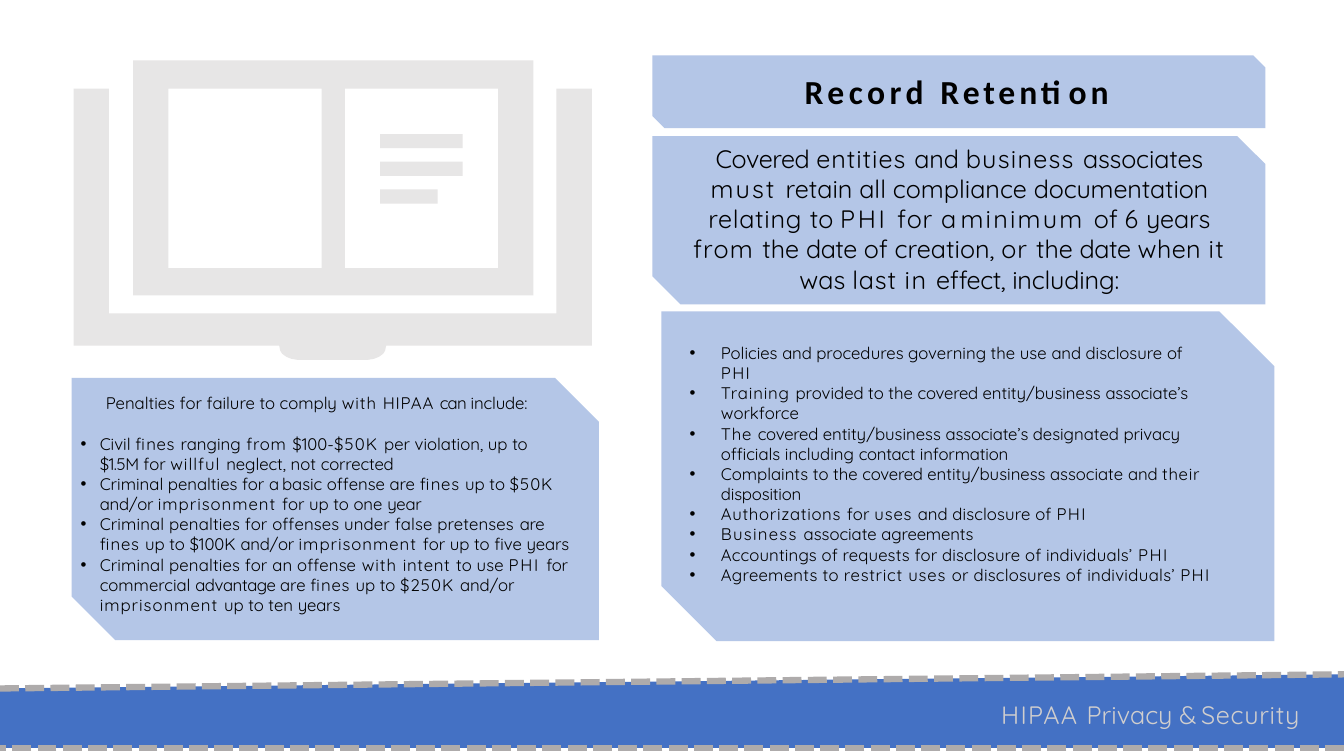
from lxml import etree
from pptx import Presentation
from pptx import util as u
from pptx.dml.color import RGBColor
from pptx.enum import dml, shapes, text
from pptx.oxml import ns

PANEL, ICON, BAND, DASH = "B4C6E7", "E7E6E6", "4471C4", "AEABAB"
INK, PALE = "000000", "D0CECE"

# A number in square brackets sets the letter spacing, in points, of what follows.
# A line that starts with a bullet opens a list item; other lines continue it.
INTRO = [
    "[-0.3]Covered [0.7]entities [-0.1]and [0.9]business [-0.1]associates [1.5]must "
    "[0]retain all compliance [-0.1]documentation [0.5]relating [0]to [1.9]PHI [0.6]for "
    "[-1.8]a [1.6]minimum [0]of [0.9]6[-0.1] years [0.9]from [0]the [-0.3]date "
    "[0]of creation, [0.7]or [0]the [-0.3]date [0.3]when [1.1]it [0]was [0.6]last "
    "[1.1]in [-0.3]effect, [-0.1]including:",
]
RECORDS = [
    "•Policies [-0.1]and [0]procedures governing the use [-0.1]and [0]disclosure [-0.2]of",
    "[1]PHI",
    "•[0.6]Training [0]provided to the [-0.2]covered [0]entity/business [-0.1]associate’s",
    "workforce",
    "•[0.6]The [-0.2]covered [0]entity/business [-0.1]associate’s [0]designated [-0.1]privacy",
    "officials including [-0.2]contact [-0.1]information",
    "•Complaints to the [-0.2]covered [0]entity/business associate [-0.1]and [0.5]their "
    "[-0.1]disposition",
    "•[0.5]Authorizations [0.1]for [0.6]uses [0]and [0.1]disclosure of [1]PHI",
    "•[0.9]Business [0]associate [-0.1]agreements",
    "•[0.1]Accountings of requests for disclosure of individuals’ [1]PHI",
    "•[0.2]Agreements to [0.5]restrict [0.6]uses [0.2]or disclosures of individuals’ [0.9]PHI",
]
PENALTIES = [
    "•Civil [0.5]fines [0]ranging[0.6] from [0]$100-[0.8]$50K [0]per violation, up [-0.2]to",
    "[-0.3]$1.5M [0]for [0.7]willful [0]neglect, not [-0.1]corrected",
    "•Criminal penalties for [-1.3]a [0]basic offense are [0.5]fines [0]up to [0.7]$50K "
    "[-0.2]and/or [0.7]imprisonment [0]for up to one [-0.2]year",
    "•[0.1]Criminal penalties for offenses under false pretenses [-0.2]are",
    "[0.5]fines [0]up to $100K [-0.2]and/or [0.7]imprisonment [0]for up to five [-0.1]years",
    "•[0.1]Criminal penalties for an offense [0.7]with [0.5]intent [0.1]to use [1.2]PHI "
    "[-0.2]for [0]commercial [-0.3]advantage [0]are [0.5]fines [0]up to [0.7]$250K "
    "[-0.1]and/or [0.7]imprisonment [0]up to ten [-0.1]years",
]


def color(value):
    return RGBColor.from_string(value)


def paint(shape, fill):
    shape.shadow.inherit = False
    shape.fill.solid()
    shape.fill.fore_color.rgb = color(fill)
    shape.line.fill.background()


def panel(page, box):
    kind = shapes.MSO_SHAPE.SNIP_2_DIAG_RECTANGLE
    paint(page.shapes.add_shape(kind, *map(u.Inches, box)), PANEL)


def outline(page, box, contours, fill):
    """Fill closed contours whose points are relative to the box."""
    left, top = box[:2]
    builder = None
    for contour in contours:
        points = [(u.Inches(left + x), u.Inches(top + y)) for x, y in contour]
        if builder is None:
            builder = page.shapes.build_freeform(*points[0])
        else:
            builder.move_to(*points[0])
        builder.add_line_segments(points[1:], close=True)
    paint(builder.convert_to_shape(), fill)


def write(page, box, lines, size, ink=INK, name="Quicksand", bold=False,
          align=text.PP_ALIGN.LEFT, before=1, indent=0.01, hang=0):
    frame = page.shapes.add_textbox(*map(u.Inches, box)).text_frame
    settings = {"word_wrap": True, "margin_left": 0, "margin_right": 0,
                "margin_top": u.Inches(0.01), "margin_bottom": 0}
    for key, value in settings.items():
        setattr(frame, key, value)
    font = {"size": u.Pt(size), "name": name, "bold": bold}
    for number, line in enumerate(lines):
        para = frame.add_paragraph() if number else frame.paragraphs[0]
        para.alignment = align
        para.space_before = u.Pt(0 if number else before)
        layout = para._p.get_or_add_pPr()
        layout.set("marL", str(u.Inches(indent)))
        if line.startswith("•"):
            layout.set("indent", str(-u.Inches(hang)))
            etree.SubElement(layout, ns.qn("a:buFont")).set("typeface", "Arial")
            etree.SubElement(layout, ns.qn("a:buChar")).set("char", "•")
        for piece in ("0]" + line.lstrip("•")).split("["):
            spacing, _, words = piece.partition("]")
            if not words:
                continue
            span = para.add_run()
            span.text = words
            for key, value in font.items():
                setattr(span.font, key, value)
            span.font.color.rgb = color(ink)
            span._r.get_or_add_rPr().set("spc", str(round(float(spacing) * 100)))


def rectangle(left, top, width, height):
    right, bottom = left + width, top + height
    return [(left, top), (right, top), (right, bottom), (left, bottom)]


def laptop(page, box):
    width, height = box[2:]
    middle = width / 2
    # Screen frame, two open pages, lines of writing on the right page
    screen = rectangle(0.59, 0, 3.97, 2.33)
    sheets = [rectangle(x, 0.28, 1.52, 1.78) for x in (0.94, 2.69)]
    writing = [rectangle(3.04, 0.73 + 0.275 * row, length, 0.14)
               for row, length in enumerate((0.82, 0.82, 0.57))]
    # Body with a rounded foot below its middle
    foot = [(0.53, 2.83), (0.52, 2.88), (0.5, 2.91), (0.46, 2.94), (0.41, 2.96), (0.35, height)]
    half = [(middle - 0.35, 0.28), (middle, 0.28), (middle, 2.83)] + foot
    right_side = [(middle + x, y) for x, y in half]
    left_side = [(middle - x, y) for x, y in reversed(half)]
    inner = [(0.35, 2.51), (width - 0.35, 2.51)]
    outline(page, box, [screen, *sheets, *writing, inner + right_side + left_side], ICON)


def retention(page, box):
    left, top, width, _ = box
    # Heading
    panel(page, (left, top, width, 0.72))
    write(page, (left + 1.51, top + 0.14, 4.65, 0.5), ["[3.2]Record [2.8]Retention"],
          24, name="Calibri", bold=True, indent=0)
    # Rule
    panel(page, (left, top + 0.8, width, 1.67))
    write(page, (left + 0.32, top + 0.86, 5.44, 1.53), INTRO, 18, align=text.PP_ALIGN.CENTER)
    # Documents to keep
    panel(page, (left + 0.09, top + 2.54, width, 3.27))
    write(page, (left + 0.35, top + 2.84, 5.49, 2.43), RECORDS, 12, indent=0.33, hang=0.31)


def penalties(page, box):
    left, top = box[:2]
    panel(page, box)
    write(page, (left + 0.33, top + 0.14, 4.58, 0.23),
          ["Penalties for failure to comply [0.7]with [0.6]HIPAA [-0.5]can [-0.1]include:"], 12)
    write(page, (left + 0.08, top + 0.54, 5.07, 1.83), PENALTIES, 12, indent=0.2, hang=0.19)


def footer(page, box):
    left, top, width, height = box
    slope = 0.14
    outline(page, box, [[(width, 0), (0, slope), (0, height), (width, height)]], BAND)
    # Dashed edges
    right, bottom = left + width, top + height
    for ends in ((left, top + slope, right, top), (right, bottom, left, bottom)):
        edge = page.shapes.add_connector(shapes.MSO_CONNECTOR.STRAIGHT, *map(u.Inches, ends))
        edge.line.color.rgb = color(DASH)
        edge.line.width = u.Pt(4.5)
        edge.line.dash_style = dml.MSO_LINE.SQUARE_DOT
        etree.SubElement(edge._element.spPr, ns.qn("a:effectLst"))
    write(page, (left + 9.92, top + 0.24, 3.13, 0.33),
          ["[0.9]HIPAA [0]Privacy [-1.7]& [0.5]Security"], 18, ink=PALE, before=0.4)


def main():
    deck = Presentation()
    deck.slide_width, deck.slide_height = u.Inches(13.33), u.Inches(7.5)
    page = deck.slides.add_slide(deck.slide_layouts[6])
    footer(page, (0, 6.69, 13.33, 0.73))
    laptop(page, (0.73, 0.6, 5.14, 2.97))
    retention(page, (6.47, 0.55, 6.08, 5.8))
    penalties(page, (0.71, 3.75, 5.23, 2.6))
    deck.save("out.pptx")


if __name__ == "__main__":
    main()
